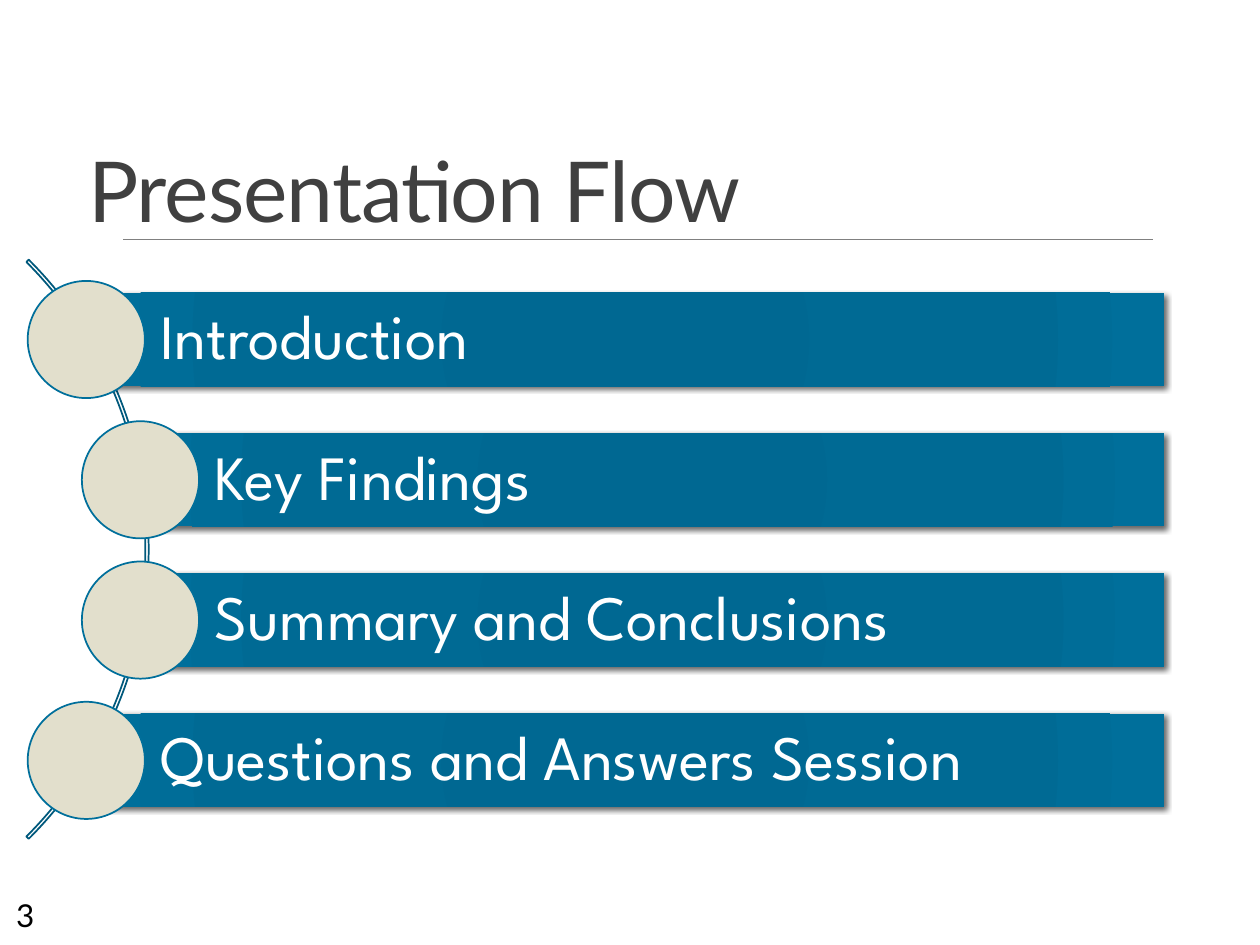
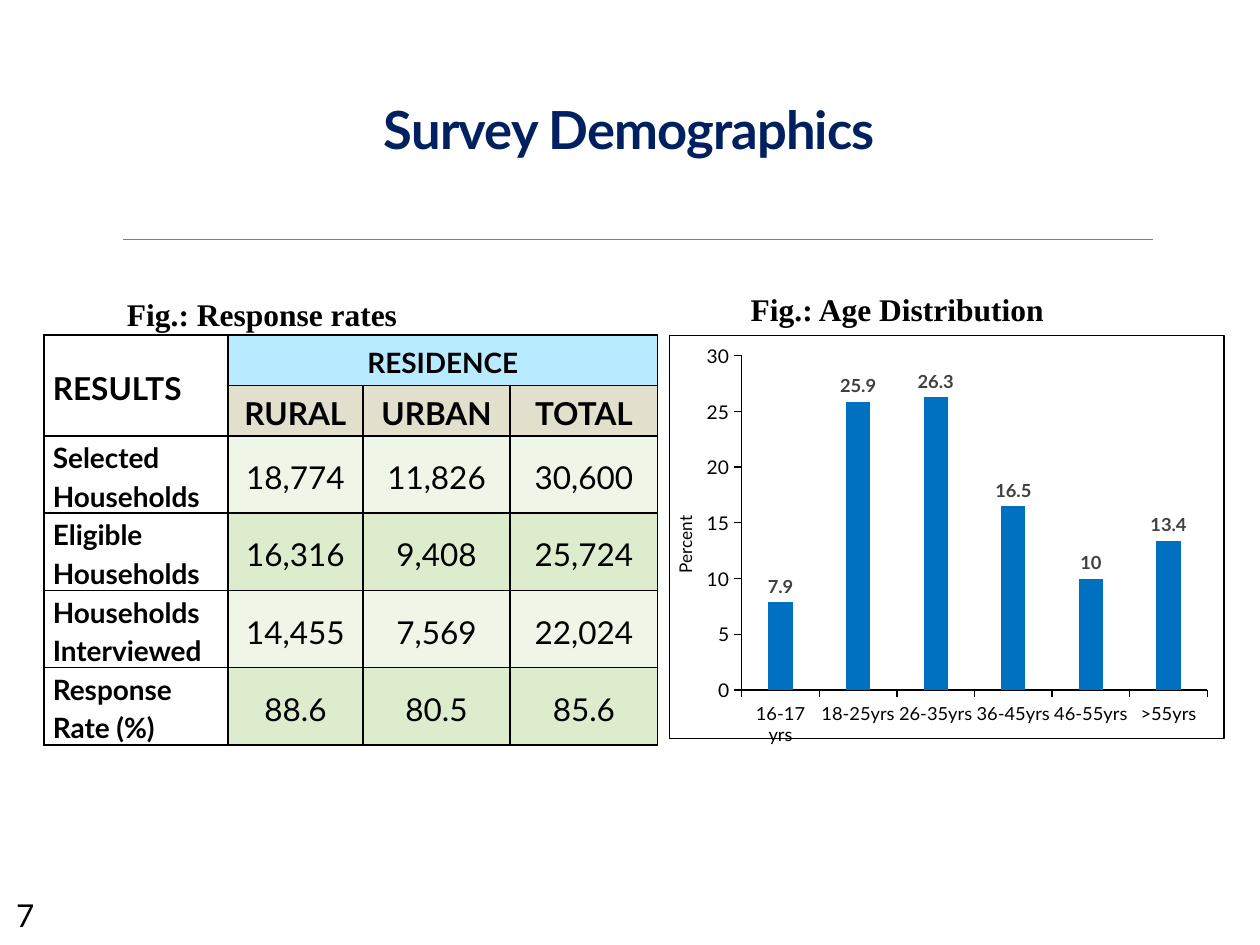
from lxml.etree import SubElement
from pptx import Presentation
from pptx.chart.data import CategoryChartData
from pptx.dml.color import RGBColor
from pptx.enum.chart import XL_CHART_TYPE, XL_LABEL_POSITION, XL_TICK_MARK
from pptx.enum.shapes import MSO_CONNECTOR, MSO_SHAPE
from pptx.enum.text import MSO_ANCHOR, PP_ALIGN
from pptx.oxml import parse_xml
from pptx.oxml.ns import nsdecls, qn
from pptx.util import Inches, Pt

COLORS = {
    "black": "000000", "white": "FFFFFF", "title": "404040", "navy": "002060",
    "rule": "808080", "arc": "00597C", "teal": "006F9B", "sand": "E2DFCC",
    "sky": "B8EBFF", "pale": "EFF6E8", "green": "DEECCE", "column": "0070C0",
}
BAR_STOPS = [(0, "006790"), (34, "006892"), (70, "006A94"), (100, "006F9B")]
BODY_FONT = "Lato"
BAR_FONT = "League Spartan"
CAPTION_FONT = "Times New Roman"


def color(name):
    return RGBColor.from_string(COLORS[name])


class SlideBuilder:
    def __init__(self, deck):
        self.deck = deck
        self.page = None

    def start(self, number):
        self.page = self.deck.slides.add_slide(self.deck.slide_layouts[6])
        rule = self.page.shapes.add_connector(
            MSO_CONNECTOR.STRAIGHT, Inches(0.98), Inches(1.9), Inches(9.15), Inches(1.9))
        rule.line.color.rgb = color("rule")
        rule.line.width = Pt(0.5)
        SubElement(rule._element.spPr, qn("a:effectLst"))
        self.text(str(number), (0.03, 7.06, 0.37, 0.4), 18)

    def style(self, font, size, ink="black", bold=False, name=BODY_FONT):
        font.name = name
        font.size = Pt(size)
        font.bold = bold
        font.color.rgb = color(ink)

    def paragraph(self, frame, words, size, align=PP_ALIGN.LEFT, spacing=1.0, **look):
        para = frame.paragraphs[0]
        para.add_run().text = words
        para.alignment = align
        para.line_spacing = spacing
        self.style(para.font, size, **look)
        return para

    def text(self, words, place, size, anchor=MSO_ANCHOR.TOP, wrap=True, **look):
        box = self.page.shapes.add_textbox(*map(Inches, place))
        box.text_frame.word_wrap = wrap
        box.text_frame.vertical_anchor = anchor
        return self.paragraph(box.text_frame, words, size, **look)

    def title(self, words, place, size, **look):
        para = self.text(words, place, size, anchor=MSO_ANCHOR.BOTTOM, **look)
        para.runs[0]._r.get_or_add_rPr().set("spc", "-50")

    def caption(self, words, place):
        self.text(words, place, 18, wrap=False, spacing=1.15, bold=True, name=CAPTION_FONT)

    def shape(self, kind, place, fill=None, line=None):
        shape = self.page.shapes.add_shape(kind, *map(Inches, place))
        shape.shadow.inherit = False
        if fill:
            shape.fill.solid()
            shape.fill.fore_color.rgb = color(fill)
        else:
            shape.fill.background()
        if line:
            shape.line.color.rgb = color(line)
            shape.line.width = Pt(1)
        else:
            shape.line.fill.background()
        return shape

    def bar(self, words, place):
        bar = self.shape(MSO_SHAPE.RECTANGLE, place)
        properties = bar._element.spPr
        stops = "".join(
            f'<a:gs pos="{position * 1000}"><a:srgbClr val="{value}"/></a:gs>'
            for position, value in BAR_STOPS)
        properties.replace(properties.find(qn("a:noFill")), parse_xml(
            f'<a:gradFill {nsdecls("a")} rotWithShape="1"><a:gsLst>{stops}</a:gsLst>'
            '<a:path path="circle"><a:fillToRect l="100000" t="100000" r="100000" b="100000"/>'
            '</a:path></a:gradFill>'))
        properties.find(qn("a:effectLst")).append(parse_xml(
            f'<a:outerShdw {nsdecls("a")} blurRad="{Pt(3)}" dist="{Pt(2)}" dir="2700000" '
            f'algn="tl" rotWithShape="0"><a:srgbClr val="{COLORS["black"]}">'
            '<a:alpha val="60000"/></a:srgbClr></a:outerShdw>'))
        frame = bar.text_frame
        frame.word_wrap = True
        frame.vertical_anchor = MSO_ANCHOR.MIDDLE
        frame.margin_left = Inches(0.59)
        frame.margin_right = frame.margin_top = frame.margin_bottom = Inches(0.1)
        self.paragraph(frame, words, 36, spacing=0.9, ink="white", name=BAR_FONT)

    def table(self, left, top, widths, heights):
        frame = self.page.shapes.add_table(
            len(heights), len(widths), Inches(left), Inches(top),
            Inches(sum(widths)), Inches(sum(heights)))
        table = frame.table
        table.first_row = table.horz_banding = False
        for column, width in zip(table.columns, widths):
            column.width = Inches(width)
        for row, height in zip(table.rows, heights):
            row.height = Inches(height)
        for cell in table.iter_cells():
            for side in ("lnL", "lnR", "lnT", "lnB"):
                cell._tc.get_or_add_tcPr().append(parse_xml(
                    f'<a:{side} {nsdecls("a")} w="{Pt(1)}"><a:solidFill>'
                    f'<a:srgbClr val="{COLORS["black"]}"/></a:solidFill></a:{side}>'))
        return table

    def cell(self, cell, words, size, fill, align=PP_ALIGN.CENTER, bold=True):
        cell.fill.solid()
        cell.fill.fore_color.rgb = color(fill)
        cell.vertical_anchor = MSO_ANCHOR.MIDDLE
        cell.margin_left = cell.margin_right = Inches(0.07)
        cell.margin_top = cell.margin_bottom = 0
        self.paragraph(cell.text_frame, words, size, align, 1.15, bold=bold)

    def column_chart(self, place, values, axis_title, layout):
        data = CategoryChartData()
        data.categories = list(values)
        data.add_series("Series 1", list(values.values()))
        chart = self.page.shapes.add_chart(
            XL_CHART_TYPE.COLUMN_CLUSTERED, *map(Inches, place), data).chart
        chart.has_title = chart.has_legend = False
        self.style(chart.font, 10)

        for axis, size in ((chart.category_axis, 10.5), (chart.value_axis, 11)):
            axis.has_major_gridlines = False
            axis.major_tick_mark = XL_TICK_MARK.OUTSIDE
            axis.minor_tick_mark = XL_TICK_MARK.NONE
            axis.format.line.color.rgb = color("black")
            axis.format.line.width = Pt(0.75)
            self.style(axis.tick_labels.font, size)
        chart.value_axis.minimum_scale = 0
        chart.value_axis.maximum_scale = 30
        chart.value_axis.major_unit = 5
        self.paragraph(chart.value_axis.axis_title.text_frame, axis_title, 10)

        plot = chart.plots[0]
        plot.gap_width = 219
        plot.overlap = -27
        plot.vary_by_categories = False
        fill = plot.series[0].format.fill
        fill.solid()
        fill.fore_color.rgb = color("column")
        labels = plot.series[0].data_labels
        labels.show_value = True
        labels.position = XL_LABEL_POSITION.OUTSIDE_END
        self.style(labels.font, 10.5, "title", bold=True)

        area = chart._chartSpace.chart.plotArea
        for automatic in area.findall(qn("c:layout")):
            area.remove(automatic)
        edges = "".join(f'<c:{key} val="{value}"/>' for key, value in zip("xywh", layout))
        area.insert(0, parse_xml(
            f'<c:layout {nsdecls("c")}><c:manualLayout><c:layoutTarget val="inner"/>'
            f'<c:xMode val="edge"/><c:yMode val="edge"/>{edges}</c:manualLayout></c:layout>'))
        chart._chartSpace.chart.addnext(parse_xml(
            f'<c:spPr {nsdecls("c", "a")}><a:noFill/><a:ln w="{Pt(0.75)}"><a:solidFill>'
            f'<a:srgbClr val="{COLORS["black"]}"/></a:solidFill></a:ln></c:spPr>'))


def build_flow(builder):
    builder.start(3)
    builder.title("Presentation Flow", (0.6, 0.36, 8.25, 1.59), 48, ink="title", spacing=0.85)
    arc = builder.shape(MSO_SHAPE.BLOCK_ARC, (-5.32, 1.11, 6.5, 6.5), line="arc")
    for index, value in enumerate((189, 27, 0.004)):
        arc.adjustments[index] = value

    topics = [
        ("Introduction", 0.22),
        ("Key Findings", 0.65),
        ("Summary and Conclusions", 0.65),
        ("Questions and Answers Session", 0.22),
    ]
    diameter, bar_height, bar_right = 0.93, 0.74, 9.24
    pitch = 3.34 / (len(topics) - 1)
    for index, (topic, left) in enumerate(topics):
        top = 2.23 + index * pitch
        bar_left = left + diameter / 2
        bar_top = top + (diameter - bar_height) / 2
        builder.bar(topic, (bar_left, bar_top, bar_right - bar_left, bar_height))
        builder.shape(MSO_SHAPE.OVAL, (left, top, diameter, diameter), "sand", "teal")


def build_demographics(builder):
    builder.start(7)
    builder.title("Survey Demographics", (0.87, 0.78, 8.25, 0.54), 30,
                  align=PP_ALIGN.CENTER, ink="navy", bold=True)

    table = builder.table(0.35, 2.66, [1.46, 1.07, 1.17, 1.17], [0.4] * 2 + [0.61] * 4)
    table.cell(0, 0).merge(table.cell(1, 0))
    table.cell(0, 1).merge(table.cell(0, 3))
    builder.cell(table.cell(0, 0), "RESULTS", 18, "white", PP_ALIGN.JUSTIFY)
    builder.cell(table.cell(0, 1), "RESIDENCE", 16, "sky")
    for column, heading in enumerate(("RURAL", "URBAN", "TOTAL"), 1):
        builder.cell(table.cell(1, column), heading, 18, "sand")
    results = [
        ("Selected Households", "18,774", "11,826", "30,600"),
        ("Eligible Households", "16,316", "9,408", "25,724"),
        ("Households Interviewed", "14,455", "7,569", "22,024"),
        ("Response Rate (%)", "88.6", "80.5", "85.6"),
    ]
    for row, (label, *figures) in enumerate(results, 2):
        builder.cell(table.cell(row, 0), label, 16, "white", PP_ALIGN.JUSTIFY)
        for column, figure in enumerate(figures, 1):
            fill = "green" if row % 2 else "pale"
            builder.cell(table.cell(row, column), figure, 18, fill, bold=False)
    builder.caption("Fig.: Response rates", (0.91, 2.25, 2.37, 0.45))

    ages = {"16-17 yrs": 7.9, "18-25yrs": 25.9, "26-35yrs": 26.3,
            "36-45yrs": 16.5, "46-55yrs": 10, ">55yrs": 13.4}
    builder.column_chart((5.31, 2.66, 4.41, 3.26), ages, "Percent", (0.13, 0.05, 0.84, 0.83))
    builder.caption("Fig.: Age Distribution", (5.86, 2.21, 2.55, 0.45))


def main():
    deck = Presentation()
    deck.slide_width = Inches(10)
    deck.slide_height = Inches(7.5)
    builder = SlideBuilder(deck)
    build_flow(builder)
    build_demographics(builder)
    deck.save("out.pptx")


if __name__ == "__main__":
    main()
